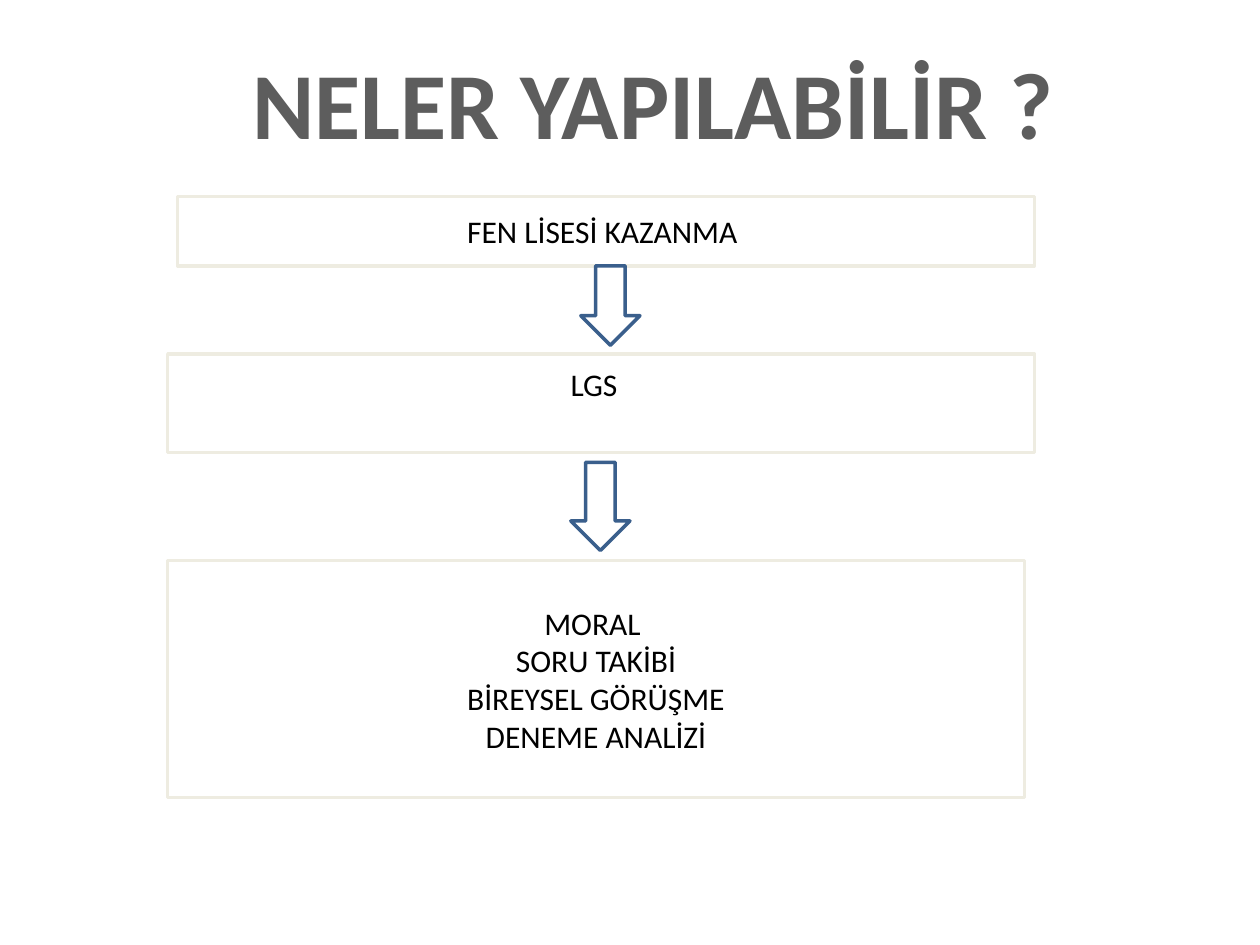
from dataclasses import dataclass

from pptx import Presentation
from pptx.dml.color import RGBColor
from pptx.enum.shapes import MSO_SHAPE
from pptx.enum.text import MSO_ANCHOR, PP_ALIGN
from pptx.util import Pt


@dataclass(frozen=True)
class Theme:
    font: str = "Calibri"
    title_size: int = 54
    body_size: int = 18
    title: str = "5D5D5D"
    body: str = "000000"
    fill: str = "FFFFFF"
    step_line: str = "EEECE1"
    arrow_line: str = "3A5F8C"
    line_width: int = 2


THEME = Theme()
TITLE = "NELER YAPILABİLİR ?"
TITLE_AREA = (134.6, 22.3, 477.4, 72.7)
STEPS = [
    {"lines": ["FEN LİSESİ KAZANMA "], "area": (101.5, 112.3, 489.6, 39.6),
     "anchor": MSO_ANCHOR.MIDDLE, "top": 3.6, "right": 7.2},
    {"lines": ["LGS"], "area": (95.8, 202.3, 495.4, 56.2),
     "anchor": MSO_ANCHOR.TOP, "top": 6, "right": 15.2},
    {"lines": ["MORAL ", "SORU TAKİBİ", "BİREYSEL GÖRÜŞME", "DENEME ANALİZİ"],
     "area": (95.8, 320.4, 489.6, 135.4),
     "anchor": MSO_ANCHOR.MIDDLE, "top": 3.6, "right": 7.2},
]
ARROWS = [(331.9, 151.9, 33.8, 45.4), (326.2, 264.2, 33.8, 50.4)]


def write_lines(frame, lines, size, color, bold=False):
    frame.text = "\n".join(lines)
    for para in frame.paragraphs:
        para.alignment = PP_ALIGN.CENTER
        para.font.name = THEME.font
        para.font.size = Pt(size)
        para.font.bold = bold
        para.font.color.rgb = RGBColor.from_string(color)


def add_outlined(page, kind, area, line_color):
    shape = page.shapes.add_shape(kind, *map(Pt, area))
    shape.shadow.inherit = False
    shape.fill.solid()
    shape.fill.fore_color.rgb = RGBColor.from_string(THEME.fill)
    shape.line.color.rgb = RGBColor.from_string(line_color)
    shape.line.width = Pt(THEME.line_width)
    return shape


def add_step(page, step):
    box = add_outlined(page, MSO_SHAPE.RECTANGLE, step["area"], THEME.step_line)
    frame = box.text_frame
    frame.word_wrap = True
    frame.vertical_anchor = step["anchor"]
    frame.margin_top = Pt(step["top"])
    frame.margin_right = Pt(step["right"])
    write_lines(frame, step["lines"], THEME.body_size, THEME.body)


def main():
    deck = Presentation()
    deck.slide_width, deck.slide_height = Pt(720), Pt(540)
    page = deck.slides.add_slide(deck.slide_layouts[6])
    heading = page.shapes.add_textbox(*map(Pt, TITLE_AREA))
    heading.text_frame.word_wrap = False
    write_lines(heading.text_frame, [TITLE], THEME.title_size, THEME.title, bold=True)
    for step in STEPS:
        add_step(page, step)
    for area in ARROWS:
        add_outlined(page, MSO_SHAPE.DOWN_ARROW, area, THEME.arrow_line)
    deck.save("out.pptx")


if __name__ == "__main__":
    main()
